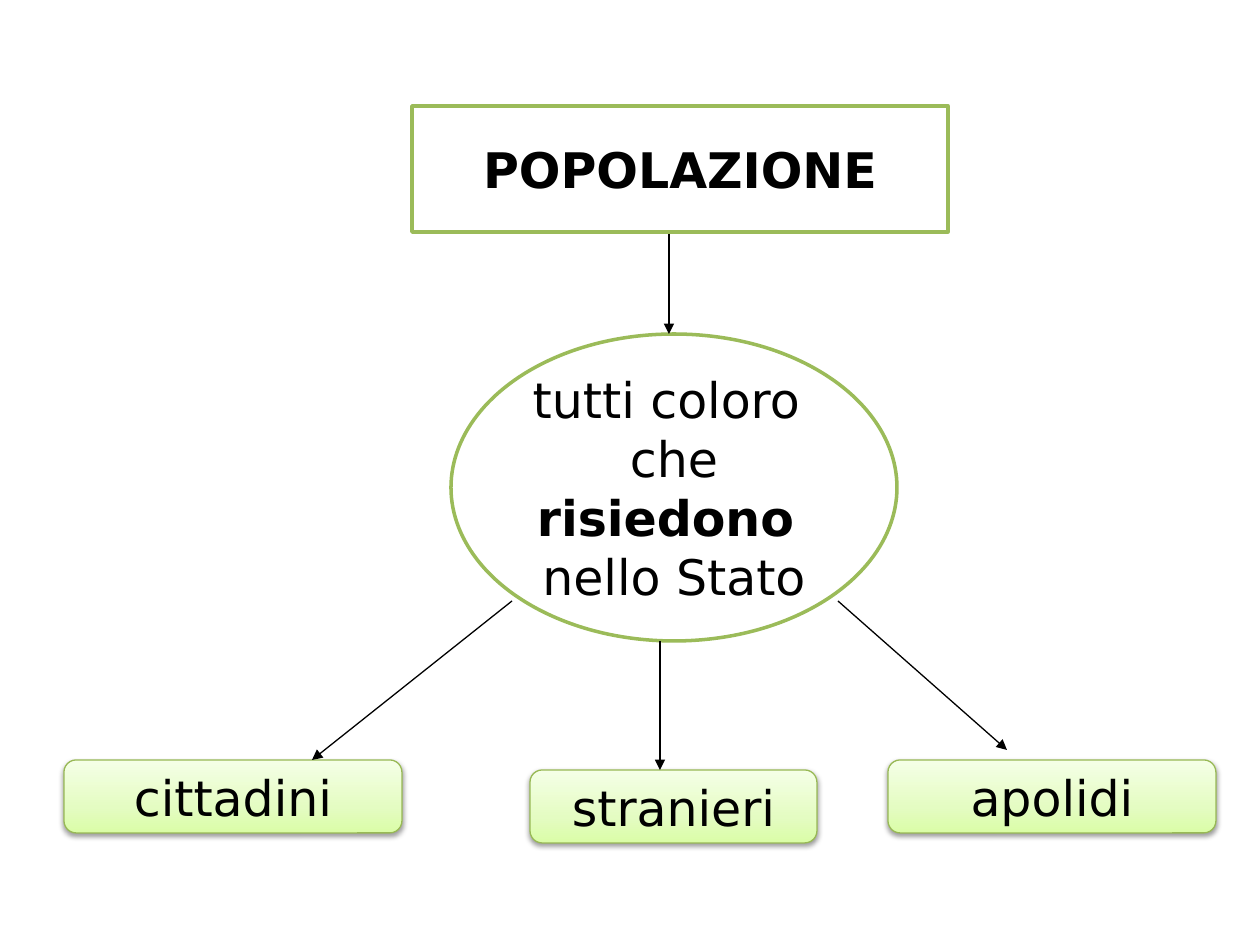
from copy import deepcopy

from lxml.etree import SubElement
from pptx import Presentation
from pptx.dml.color import RGBColor
from pptx.enum.shapes import MSO_CONNECTOR, MSO_SHAPE
from pptx.enum.text import MSO_ANCHOR, MSO_AUTO_SIZE, PP_ALIGN
from pptx.oxml.ns import qn
from pptx.util import Pt

PX = 914400 // 126
GREEN = "9BBB59"
GRADIENT = [(0, "DAFDA7"), (0.35, "E4FCC2"), (1, "F5FFE7")]


def rgb(value):
    return RGBColor.from_string(value)


def write(shape, text, size=28, color="000000", bold_lines=()):
    """Fill the shape with one centred paragraph per line of text."""
    frame = shape.text_frame
    frame.text = text
    frame.word_wrap = False
    frame.auto_size = MSO_AUTO_SIZE.NONE
    frame.vertical_anchor = MSO_ANCHOR.MIDDLE
    for number, paragraph in enumerate(frame.paragraphs):
        paragraph.alignment = PP_ALIGN.CENTER
        font = paragraph.runs[0].font
        font.name = "DejaVu Sans"
        font.size = Pt(size)
        font.bold = number in bold_lines
        font.color.rgb = rgb(color)


prs = Presentation()
prs.slide_width, prs.slide_height = 1260 * PX, 945 * PX
slide = prs.slides.add_slide(prs.slide_layouts[5])
shapes = slide.shapes

# Concept and its definition
population = shapes.title
population.left, population.top = 412 * PX, 106 * PX
population.width, population.height = 536 * PX, 126 * PX
definition = shapes.add_shape(MSO_SHAPE.OVAL, 451 * PX, 334 * PX, 446 * PX, 307 * PX)
definition.shadow.inherit = False
for outlined in (population, definition):
    outlined.fill.solid()
    outlined.fill.fore_color.rgb = rgb("FFFFFF")
    outlined.line.color.rgb = rgb(GREEN)
    outlined.line.width = Pt(2)
write(population, "POPOLAZIONE", bold_lines=[0])
write(definition, "tutti coloro \nche\nrisiedono \nnello Stato", bold_lines=[2])

# The three groups
for group, left, top, width in [
    ("cittadini", 64, 760, 338),
    ("stranieri", 530, 770, 287),
    ("apolidi", 888, 760, 328),
]:
    box = shapes.add_shape(
        MSO_SHAPE.ROUNDED_RECTANGLE, left * PX, top * PX, width * PX, 73 * PX
    )
    box.fill.gradient()
    box.fill.gradient_angle = 90
    stop_list = box.element.spPr.find(".//" + qn("a:gsLst"))
    stop_list.append(deepcopy(stop_list[0]))
    for stop, (position, color) in zip(box.fill.gradient_stops, GRADIENT):
        stop.position = position
        stop.color.rgb = rgb(color)
    box.line.color.rgb = rgb("98B955")
    box.line.width = Pt(0.75)

    box.shadow.inherit = False
    effects = box.element.spPr.find(qn("a:effectLst"))
    shadow = SubElement(
        effects, qn("a:outerShdw"), blurRad=str(Pt(3.1)), dist=str(Pt(1.6)),
        dir="5400000", rotWithShape="0",
    )
    shadow_color = SubElement(shadow, qn("a:srgbClr"), val="000000")
    SubElement(shadow_color, qn("a:alpha"), val="38000")
    write(box, group)

# Arrows: start x, start y, end x, end y
for ends in [
    (512, 601, 312, 760),
    (660, 641, 660, 770),
    (838, 601, 1007, 750),
    (669, 234, 669, 334),
]:
    arrow = shapes.add_connector(MSO_CONNECTOR.STRAIGHT, *(end * PX for end in ends))
    arrow.line.color.rgb = rgb("000000")
    arrow.line.width = Pt(0.75)
    SubElement(arrow.line._get_or_add_ln(), qn("a:tailEnd"), type="triangle")
    SubElement(arrow.element.spPr, qn("a:effectLst"))

prs.save("out.pptx")
